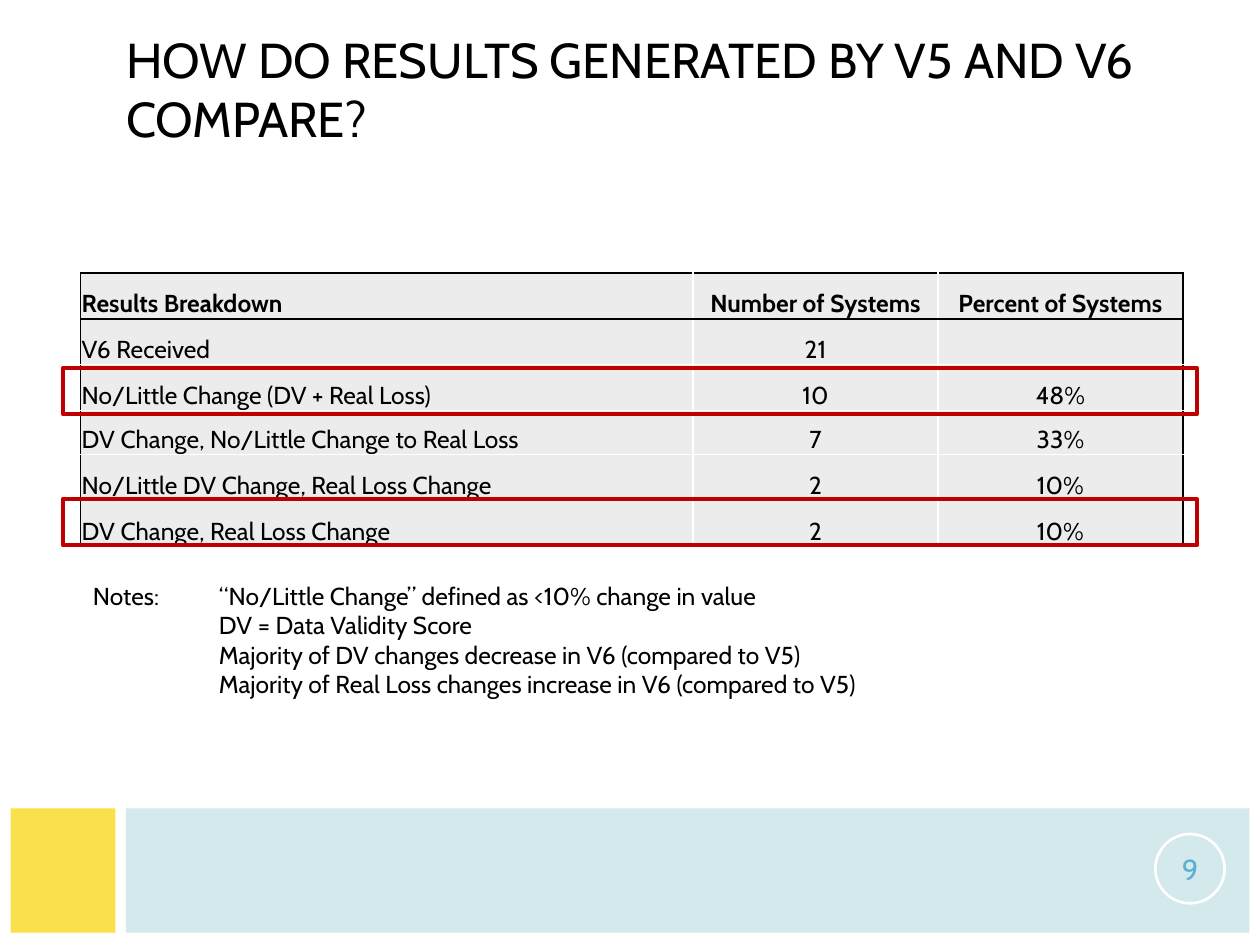
from lxml.etree import SubElement
from pptx import Presentation
from pptx.dml.color import RGBColor
from pptx.enum.shapes import MSO_SHAPE as SHAPE
from pptx.enum.text import MSO_ANCHOR as ANCHOR, MSO_AUTO_SIZE as AUTO, PP_ALIGN as ALIGN
from pptx.oxml.ns import qn
from pptx.util import Pt

FONT = "Cabin"
COLORS = {
    "text": "000000", "white": "FFFFFF", "cell": "ECECEC", "yellow": "FAE04B",
    "band": "C8E4E8", "number": "5BAFD1", "highlight": "C00000",
}


def rgb(name):
    return RGBColor.from_string(COLORS[name])


def style(p, size, color="text", bold=False, align=ALIGN.LEFT):
    p.alignment = align
    p.font.name, p.font.size, p.font.bold = FONT, Pt(size), bold
    p.font.color.rgb = rgb(color)


prs = Presentation()
prs.slide_width, prs.slide_height = Pt(720), Pt(540)
s = prs.slides.add_slide(prs.slide_layouts[5])

# Footer blocks
for left, width, color in [(6, 60, "yellow"), (72, 642, "band")]:
    block = s.shapes.add_shape(SHAPE.RECTANGLE, Pt(left), Pt(462), Pt(width), Pt(71))
    block.shadow.inherit = False
    block.fill.solid()
    block.fill.fore_color.rgb = rgb(color)
    block.line.fill.background()
    if color == "band":
        srgb = block.fill._xPr.find(".//" + qn("a:srgbClr"))
        SubElement(srgb, qn("a:alpha"), val="80000")

# Title
title = s.shapes.title
title.left, title.top, title.width, title.height = Pt(64.8), Pt(28.8), Pt(592), Pt(43.2)
tf = title.text_frame
tf.text = "HOW DO RESULTS GENERATED BY V5 AND V6 COMPARE?"
tf.vertical_anchor = ANCHOR.MIDDLE
tf.auto_size = AUTO.NONE
style(tf.paragraphs[0], 28)

# Results table
rows = [
    ("Results Breakdown", "Number of Systems", "Percent of Systems"),
    ("V6 Received", "21", ""),
    ("No/Little Change (DV + Real Loss)", "10", "48%"),
    ("DV Change, No/Little Change to Real Loss", "7", "33%"),
    ("No/Little DV Change, Real Loss Change", "2", "10%"),
    ("DV Change, Real Loss Change", "2", "10%"),
]
col_widths = [350, 140, 140]
row_heights = [26.2, 26.2, 26.2, 25.2, 26.2, 26.2]
last_row, last_col = len(rows) - 1, len(col_widths) - 1
table = s.shapes.add_table(len(rows), len(col_widths), Pt(46), Pt(156),
                           Pt(sum(col_widths)), Pt(sum(row_heights))).table
for column, width in zip(table.columns, col_widths):
    column.width = Pt(width)
for row, height in zip(table.rows, row_heights):
    row.height = Pt(height)

for i, values in enumerate(rows):
    for j, value in enumerate(values):
        cell = table.cell(i, j)
        cell.text = value
        cell.vertical_anchor = ANCHOR.BOTTOM
        cell.margin_left = cell.margin_right = cell.margin_top = Pt(0.7)
        cell.margin_bottom = 0
        style(cell.text_frame.paragraphs[0], 14, bold=i == 0,
              align=ALIGN.CENTER if j else ALIGN.LEFT)
        # Black around the table and under the header, white inside
        black_edges = {"lnL": j == 0, "lnR": j == last_col,
                       "lnT": i <= 1, "lnB": i in (0, last_row)}
        for tag, black in black_edges.items():
            ln = SubElement(cell._tc.get_or_add_tcPr(), qn("a:" + tag), w=str(Pt(1)))
            fill = SubElement(ln, qn("a:solidFill"))
            SubElement(fill, qn("a:srgbClr"), val=COLORS["text" if black else "white"])
        cell.fill.solid()
        cell.fill.fore_color.rgb = rgb("cell")

# Slide number in a circle
circle = s.shapes.add_shape(SHAPE.OVAL, Pt(660.2), Pt(476.6), Pt(39.6), Pt(39.6))
circle.shadow.inherit = False
circle.fill.background()
circle.line.color.rgb = rgb("white")
circle.line.width = Pt(1.5)
tf = circle.text_frame
tf.margin_left = tf.margin_right = tf.margin_top = tf.margin_bottom = Pt(0.7)
tf.vertical_anchor = ANCHOR.MIDDLE
tf.word_wrap = False
tf.text = "9"
style(tf.paragraphs[0], 16.5, "number", align=ALIGN.CENTER)

# Notes, with the text lined up on a tab
notes = [
    "Notes:\t“No/Little Change” defined as <10% change in value",
    "\tDV = Data Validity Score",
    "\tMajority of DV changes decrease in V6 (compared to V5)",
    "\tMajority of Real Loss changes increase in V6 (compared to V5)",
]
tf = s.shapes.add_textbox(Pt(46), Pt(328.3), Pt(603.4), Pt(75)).text_frame
tf.word_wrap = True
tf.text = "\n".join(notes)
for p in tf.paragraphs:
    tabs = SubElement(p._p.get_or_add_pPr(), qn("a:tabLst"))
    SubElement(tabs, qn("a:tab"), pos=str(Pt(72)), algn="l")
    style(p, 14)

# Frames around the highlighted rows
for top in (210.2, 285.1):
    frame = s.shapes.add_shape(SHAPE.RECTANGLE, Pt(36), Pt(top), Pt(648), Pt(26.6))
    frame.shadow.inherit = False
    frame.fill.background()
    frame.line.color.rgb = rgb("highlight")
    frame.line.width = Pt(2.25)

prs.save("out.pptx")
